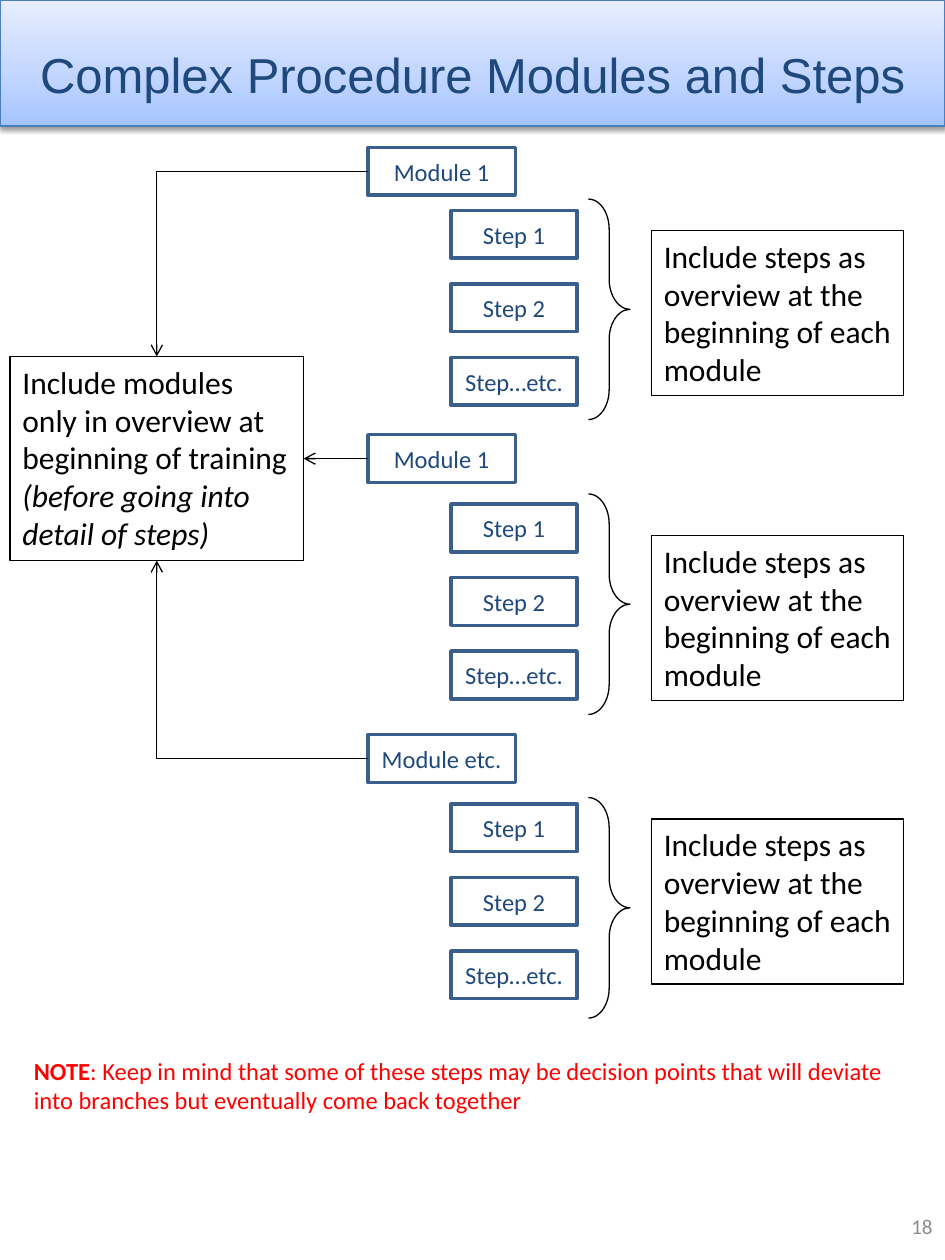
from pptx import Presentation
from pptx.dml.color import RGBColor
from pptx.enum.shapes import MSO_CONNECTOR as Link, MSO_SHAPE as Preset
from pptx.enum.text import MSO_ANCHOR as Anchor, MSO_AUTO_SIZE as AutoSize, PP_ALIGN as Align
from pptx.oxml import parse_xml
from pptx.oxml.ns import nsdecls, qn
from pptx.util import Inches, Pt

COLORS = {
    "navy": "1F497D", "step_line": "3A5F8C", "band_line": "4B7EBC",
    "band_low": "A4C4FF", "band_mid": "BFD4FF", "band_high": "E6EEFF",
    "red": "FF0000", "grey": "8C8C8C", "black": "000000", "white": "FFFFFF",
}
MODULES = [
    ("Module 1", 1.17, 0.5, 0.41, 0.66),
    ("Module 1", 3.45, 0.55, 0.47, 0.8),
    ("Module etc.", 5.83, 0.55, 0.5, 0.67),
]
STEPS = ["Step 1", "Step 2", "Step…etc."]
STEP_PITCH = 7 / 12
STEP_HEIGHT = 0.38


def rgb(name):
    return RGBColor.from_string(COLORS[name])


def write(shape, *paragraphs, size=18, font="Calibri", color="black",
          align=Align.LEFT, anchor=Anchor.TOP, grow=False):
    frame = shape.text_frame
    frame.word_wrap = True
    frame.auto_size = AutoSize.SHAPE_TO_FIT_TEXT if grow else AutoSize.NONE
    frame.vertical_anchor = anchor
    for index, runs in enumerate(paragraphs):
        paragraph = frame.paragraphs[0] if index == 0 else frame.add_paragraph()
        paragraph.alignment = align
        for words, style in runs:
            run = paragraph.add_run()
            run.text = words
            run.font.size = Pt(size)
            run.font.name = font
            run.font.color.rgb = rgb(color)
            run.font.bold = style == "bold"
            run.font.italic = style == "italic"


def add_outline(slide, preset, box, line="black", weight=0.75, fill=None):
    shape = slide.shapes.add_shape(preset, *map(Inches, box))
    shape.shadow.inherit = False
    if fill:
        shape.fill.solid()
        shape.fill.fore_color.rgb = rgb(fill)
    else:
        shape.fill.background()
    shape.line.color.rgb = rgb(line)
    shape.line.width = Pt(weight)
    return shape


def add_header(slide, left, top, width, height):
    band = add_outline(slide, Preset.RECTANGLE, (left, top, width, height), line="band_line")
    stops = "".join(
        f'<a:gs pos="{place * 1000}"><a:srgbClr val="{COLORS[name]}"/></a:gs>'
        for place, name in [(0, "band_low"), (35, "band_mid"), (100, "band_high")])
    properties = band._element.spPr
    properties.replace(properties.find(qn("a:noFill")), parse_xml(
        f'<a:gradFill {nsdecls("a")}><a:gsLst>{stops}</a:gsLst>'
        '<a:lin ang="16200000" scaled="0"/></a:gradFill>'))
    properties.find(qn("a:effectLst")).append(parse_xml(
        f'<a:outerShdw {nsdecls("a")} blurRad="{Pt(3.1)}" dist="{Pt(1.6)}" dir="5400000" '
        f'rotWithShape="0"><a:srgbClr val="{COLORS["black"]}"><a:alpha val="38000"/>'
        '</a:srgbClr></a:outerShdw>'))
    slide.shapes._spTree.insert(2, band._element)

    title = slide.shapes.title
    title.left, title.top = Inches(left), Inches(top + 0.3)
    title.width, title.height = Inches(width), Inches(0.57)
    write(title, [("Complex Procedure Modules and Steps", "")], size=28, font="Arial",
          color="navy", align=Align.CENTER, anchor=Anchor.MIDDLE, grow=True)


def add_label(slide, words, box):
    label = add_outline(slide, Preset.RECTANGLE, box, line="step_line", weight=2, fill="white")
    write(label, [(words, "")], size=14, color="navy", align=Align.CENTER, anchor=Anchor.MIDDLE)


def add_module(slide, left, top, name, steps_drop, brace_drop, advice_drop):
    add_label(slide, name, (left, top, 1.17, STEP_HEIGHT))
    for index, step in enumerate(STEPS):
        step_top = top + steps_drop + index * STEP_PITCH
        add_label(slide, step, (left + 0.66, step_top, 1, STEP_HEIGHT))

    brace = add_outline(slide, Preset.RIGHT_BRACE, (left + 1.75, top + brace_drop, 0.33, 1.75))
    brace.adjustments[0] = 0.724
    brace.adjustments[1] = 0.5

    advice = add_outline(slide, Preset.RECTANGLE, (left + 2.25, top + advice_drop, 2, 1.31))
    write(advice, [("Include steps as overview at the beginning of each module", "")], grow=True)


def add_arrow(slide, start, end):
    bent = start[1] != end[1]
    arrow = slide.shapes.add_connector(
        Link.ELBOW if bent else Link.STRAIGHT, *map(Inches, start + end))
    arrow.line.color.rgb = rgb("black")
    arrow.line.width = Pt(0.75)
    properties = arrow._element.spPr
    if bent:
        properties.find(qn("a:prstGeom")).set("prst", "bentConnector2")
    properties.find(qn("a:ln")).append(parse_xml(f'<a:tailEnd {nsdecls("a")} type="arrow"/>'))
    properties.append(parse_xml(f'<a:effectLst {nsdecls("a")}/>'))


def add_overview(slide, left, top, width, height, module_left):
    overview = add_outline(slide, Preset.RECTANGLE, (left, top, width, height))
    write(overview,
          [("Include modules only in overview at beginning of training", "")],
          [("(before going into detail of steps)", "italic")], grow=True)
    center = left + width / 2
    first, second, last = [module[1] + STEP_HEIGHT / 2 for module in MODULES]
    add_arrow(slide, (module_left, first), (center, top))
    add_arrow(slide, (module_left, second), (left + width, second))
    add_arrow(slide, (module_left, last), (center, top + height))


def add_note(slide, *box):
    note = slide.shapes.add_textbox(*map(Inches, box))
    write(note, [("NOTE", "bold"),
                 (": Keep in mind that some of these steps may be decision points that will "
                  "deviate into branches but eventually come back together", "")],
          size=14, color="red", grow=True)


def add_page_number(slide, *box):
    number = slide.shapes.add_textbox(*map(Inches, box))
    write(number, [("18", "")], size=12, color="grey", align=Align.RIGHT, anchor=Anchor.MIDDLE)


def main():
    deck = Presentation()
    deck.slide_width, deck.slide_height = Inches(7.5), Inches(10)
    slide = deck.slides.add_slide(deck.slide_layouts[5])
    module_left = 2.92
    add_header(slide, 0, 0, 7.5, 1)
    add_page_number(slide, 5.75, 9.47, 1.75, 0.53)
    for name, top, *drops in MODULES:
        add_module(slide, module_left, top, name, *drops)
    add_note(slide, 0.17, 8.33, 7.08, 0.57)
    add_overview(slide, 0.08, 2.83, 2.33, 1.62, module_left)
    deck.save("out.pptx")


if __name__ == "__main__":
    main()
